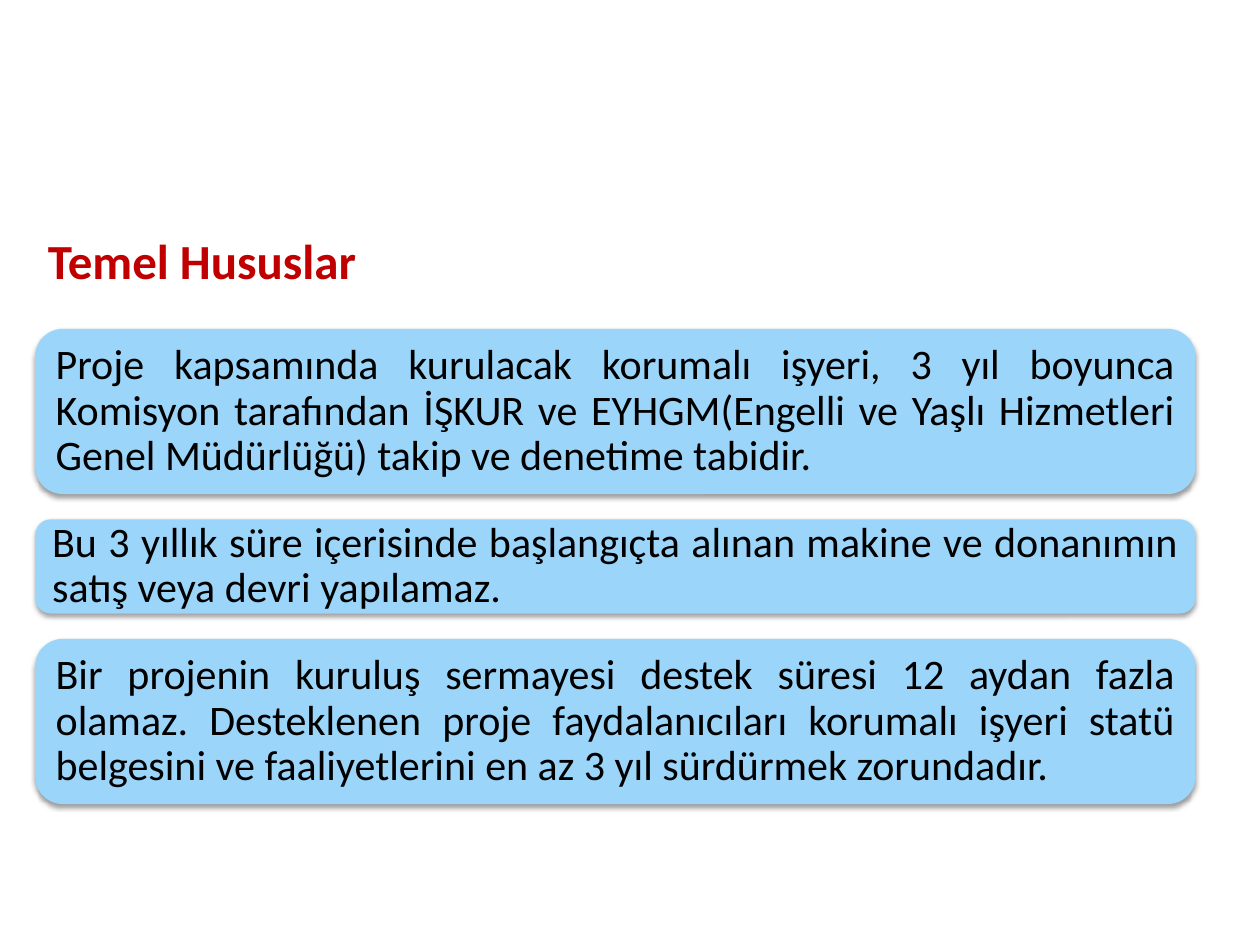
from lxml.etree import SubElement
from pptx import Presentation
from pptx.dml.color import RGBColor
from pptx.enum.shapes import MSO_SHAPE
from pptx.enum.text import MSO_ANCHOR, MSO_AUTO_SIZE, PP_ALIGN
from pptx.oxml.ns import qn
from pptx.util import Cm, Pt

LEFT = 0.71
BOX_WIDTH = 23.39
FIRST_BOX_TOP = 6.63
BOX_GAP = 0.51

TITLE_FONT = {"name": "Calibri", "size": Pt(28), "bold": True}
BODY_FONT = {"name": "Calibri", "size": Pt(24), "bold": False}
BOX_FRAME = {
    "word_wrap": True,
    "vertical_anchor": MSO_ANCHOR.MIDDLE,
    "margin_left": Cm(0.25),
    "margin_right": Cm(0.25),
    "margin_top": Cm(0.25),
    "margin_bottom": Cm(0.25),
}
TITLE_FRAME = {
    "word_wrap": True,
    "vertical_anchor": MSO_ANCHOR.TOP,
    "auto_size": MSO_AUTO_SIZE.NONE,
}

# Height in centimetres and wording of each rule
RULES = [
    (3.33, "Proje kapsamında kurulacak korumalı işyeri, 3 yıl boyunca Komisyon "
           "tarafından İŞKUR ve EYHGM(Engelli ve Yaşlı Hizmetleri Genel "
           "Müdürlüğü) takip ve denetime tabidir."),
    (1.9, "Bu 3 yıllık süre içerisinde başlangıçta alınan makine ve donanımın "
          "satış veya devri yapılamaz."),
    (3.33, "Bir projenin kuruluş sermayesi destek süresi 12 aydan fazla olamaz. "
           "Desteklenen proje faydalanıcıları korumalı işyeri statü belgesini ve "
           "faaliyetlerini en az 3 yıl sürdürmek zorundadır."),
]


def color(value):
    return RGBColor.from_string(value)


def set_attributes(target, values):
    for name, value in values.items():
        setattr(target, name, value)


def write_text(shape, text, frame_values, font_values, font_color, paragraph_values):
    text_frame = shape.text_frame
    set_attributes(text_frame, frame_values)
    paragraph = text_frame.paragraphs[0]
    set_attributes(paragraph, paragraph_values)
    run = paragraph.add_run()
    run.text = text
    set_attributes(run.font, font_values)
    run.font.color.rgb = color(font_color)


def add_soft_shadow(shape):
    shape.shadow.inherit = False
    effects = shape._element.spPr.find(qn("a:effectLst"))
    shadow = SubElement(effects, qn("a:outerShdw"), blurRad=str(Pt(3.1)),
                        dist=str(Pt(1.6)), dir="5400000", rotWithShape="0")
    black = SubElement(shadow, qn("a:srgbClr"), val="000000")
    SubElement(black, qn("a:alpha"), val="38000")


def place_title(slide, text):
    title = slide.shapes.title
    set_attributes(title, {"left": Cm(LEFT), "top": Cm(4.52),
                           "width": Cm(9.19), "height": Cm(1.45)})
    write_text(title, text, TITLE_FRAME, TITLE_FONT, "C00000",
               {"alignment": PP_ALIGN.LEFT})


def add_rule_box(slide, top, height, text):
    shape = slide.shapes.add_shape(MSO_SHAPE.ROUNDED_RECTANGLE, Cm(LEFT), Cm(top),
                                   Cm(BOX_WIDTH), Cm(height))
    shape.fill.solid()
    shape.fill.fore_color.rgb = color("9BD5FA")
    shape.line.fill.background()
    add_soft_shadow(shape)
    write_text(shape, text, BOX_FRAME, BODY_FONT, "000000",
               {"alignment": PP_ALIGN.JUSTIFY, "line_spacing": 0.9})


def main():
    presentation = Presentation()
    presentation.slide_width = Cm(25.4)
    presentation.slide_height = Cm(19.05)
    slide = presentation.slides.add_slide(presentation.slide_layouts[5])

    # Heading
    place_title(slide, "Temel Hususlar")

    # Stacked rules with equal gaps
    top = FIRST_BOX_TOP
    for height, text in RULES:
        add_rule_box(slide, top, height, text)
        top += height + BOX_GAP

    presentation.save("out.pptx")


if __name__ == "__main__":
    main()
